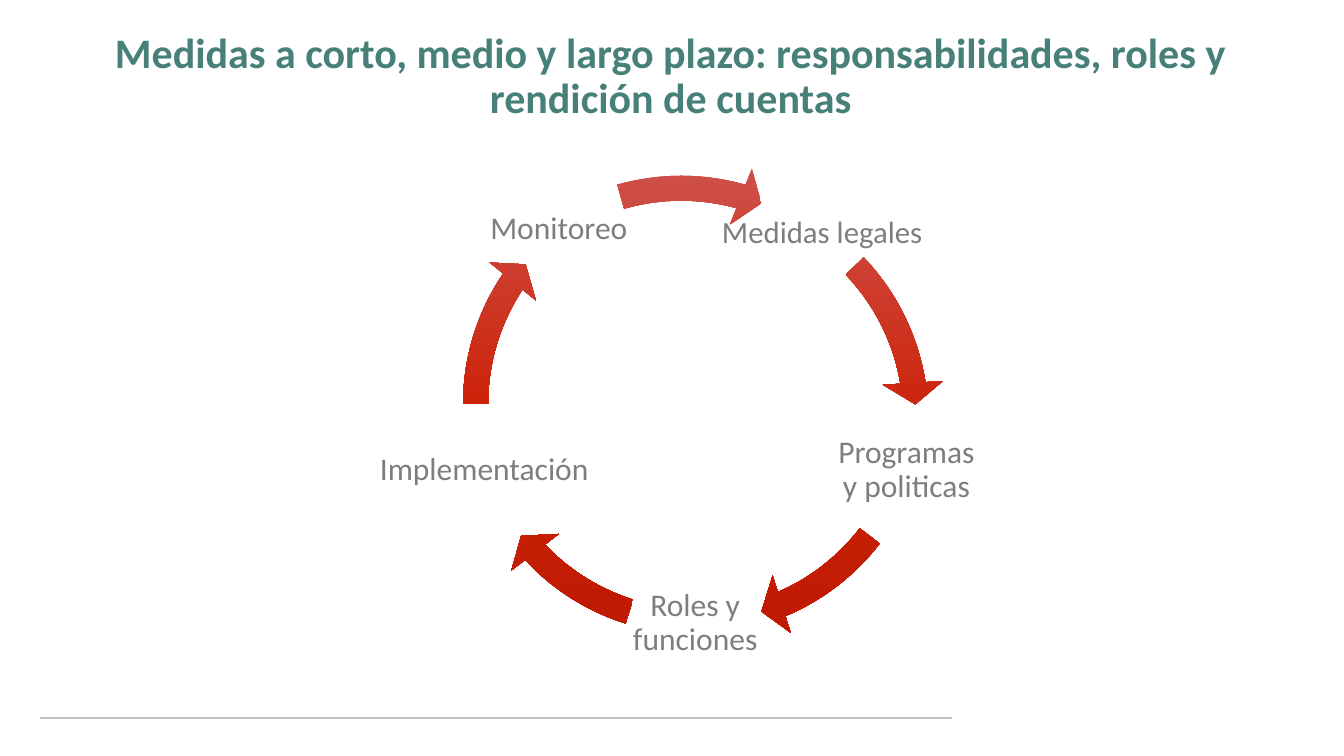
from copy import deepcopy

from pptx import Presentation
from pptx.dml.color import RGBColor
from pptx.enum.shapes import MSO_CONNECTOR, MSO_SHAPE
from pptx.enum.text import MSO_ANCHOR, PP_ALIGN
from pptx.oxml.ns import qn
from pptx.util import Inches, Pt
from lxml import etree

STRAIGHT = MSO_CONNECTOR.STRAIGHT
CIRCULAR_ARROW = MSO_SHAPE.CIRCULAR_ARROW
MIDDLE = MSO_ANCHOR.MIDDLE
CENTER = PP_ALIGN.CENTER

COLORS = {
    "title": "468078",
    "label": "7E7E7E",
    "rule": "BFBFBF",
    "arrow_top": "CE524C",
    "arrow_middle": "CD230A",
    "arrow_bottom": "BE1A01",
}
ARROW_STOPS = [(0, "arrow_top"), (0.5, "arrow_middle"), (1, "arrow_bottom")]

TITLE = "Medidas a corto, medio y largo plazo: responsabilidades, roles y rendición de cuentas"
TITLE_INSETS = (0.2, 0.1, 0.2, 1.02)
LABEL_INSETS = (0.06, 0.06, 0.06, 0.06)

ARROW_SIZE = 9.91
ARROW_THICKNESS = 0.05
ARROW_HEAD_ANGLE = 3.36
ARROW_HEAD_WIDTH = 0.06

# Label, its box and its text size, clockwise from the top right
STEPS = [
    ("Medidas legales", (13.77, 4, 5.08, 1.25), 44),
    ("Programas y politicas", (16.47, 8.02, 3.02, 2.64), 45),
    ("Roles y funciones", (12.47, 11.05, 2.64, 2.64), 45),
    ("Implementación", (7.17, 8.02, 4.87, 2.64), 45),
    ("Monitoreo", (9.54, 3.87, 3.09, 1.36), 45),
]
# Left, top, end angle and start angle of the arrow after each step
ARROWS = [
    (8.85, 3.34, 210.48, 189.73),
    (8.84, 3.02, 40.15, 22.54),
    (8.84, 3.02, 82.11, 64.5),
    (8.84, 3.06, 128.3, 108.01),
    (8.56, 3.14, 171.45, 152.39),
]


def color(name):
    return RGBColor.from_string(COLORS[name])


class SlideBuilder:
    def __init__(self, slide, font_name):
        self.slide = slide
        self.font_name = font_name

    def text(self, text, box, size, color_name, insets, bold=False):
        shape = self.slide.shapes.add_textbox(*map(Inches, box))
        frame = shape.text_frame
        left, top, right, bottom = map(Inches, insets)
        frame_format = {
            "word_wrap": True,
            "vertical_anchor": MIDDLE,
            "margin_left": left,
            "margin_top": top,
            "margin_right": right,
            "margin_bottom": bottom,
        }
        for name, value in frame_format.items():
            setattr(frame, name, value)
        paragraph = frame.paragraphs[0]
        paragraph.alignment = CENTER
        paragraph.line_spacing = 0.9
        run = paragraph.add_run()
        run.text = text
        font_format = {"name": self.font_name, "size": Pt(size), "bold": bold}
        for name, value in font_format.items():
            setattr(run.font, name, value)
        run.font.color.rgb = color(color_name)

    def rule(self, left, right, y):
        line = self.slide.shapes.add_connector(
            STRAIGHT, Inches(left), Inches(y), Inches(right), Inches(y))
        line.line.color.rgb = color("rule")
        line.line.width = Pt(2.25)
        etree.SubElement(line._element.spPr, qn("a:effectLst"))

    def cycle_arrow(self, left, top, end, start):
        """Add one arc arrow; angles are in units of 100000/60000 degrees."""
        shape = self.slide.shapes.add_shape(
            CIRCULAR_ARROW, Inches(left), Inches(top), Inches(ARROW_SIZE), Inches(ARROW_SIZE))
        shape.shadow.inherit = False
        shape.line.fill.background()
        adjustments = (ARROW_THICKNESS, ARROW_HEAD_ANGLE, end, start, ARROW_HEAD_WIDTH)
        for index, value in enumerate(adjustments):
            shape.adjustments[index] = value
        self.gradient(shape)

    def gradient(self, shape):
        """Fill from top to bottom; a new gradient has two stops, so one is added."""
        shape.fill.gradient()
        shape.fill.gradient_angle = 270
        stop_list = next(shape._element.spPr.iter(qn("a:gsLst")))
        stop_list.append(deepcopy(stop_list[-1]))
        for stop, (position, color_name) in zip(shape.fill.gradient_stops, ARROW_STOPS):
            stop.position = position
            stop.color.rgb = color(color_name)


def main():
    presentation = Presentation()
    presentation.slide_width = Inches(26.66)
    presentation.slide_height = Inches(15)
    slide = presentation.slides.add_slide(presentation.slide_layouts[6])
    builder = SlideBuilder(slide, "Calibri")

    builder.rule(0.8, 18.88, 14.25)
    builder.text(TITLE, (0.8, 0.55, 25.01, 2.9), 60, "title", TITLE_INSETS, bold=True)
    for (label, box, size), arrow in zip(STEPS, ARROWS):
        builder.text(label, box, size, "label", LABEL_INSETS)
        builder.cycle_arrow(*arrow)

    presentation.save("out.pptx")


if __name__ == "__main__":
    main()
